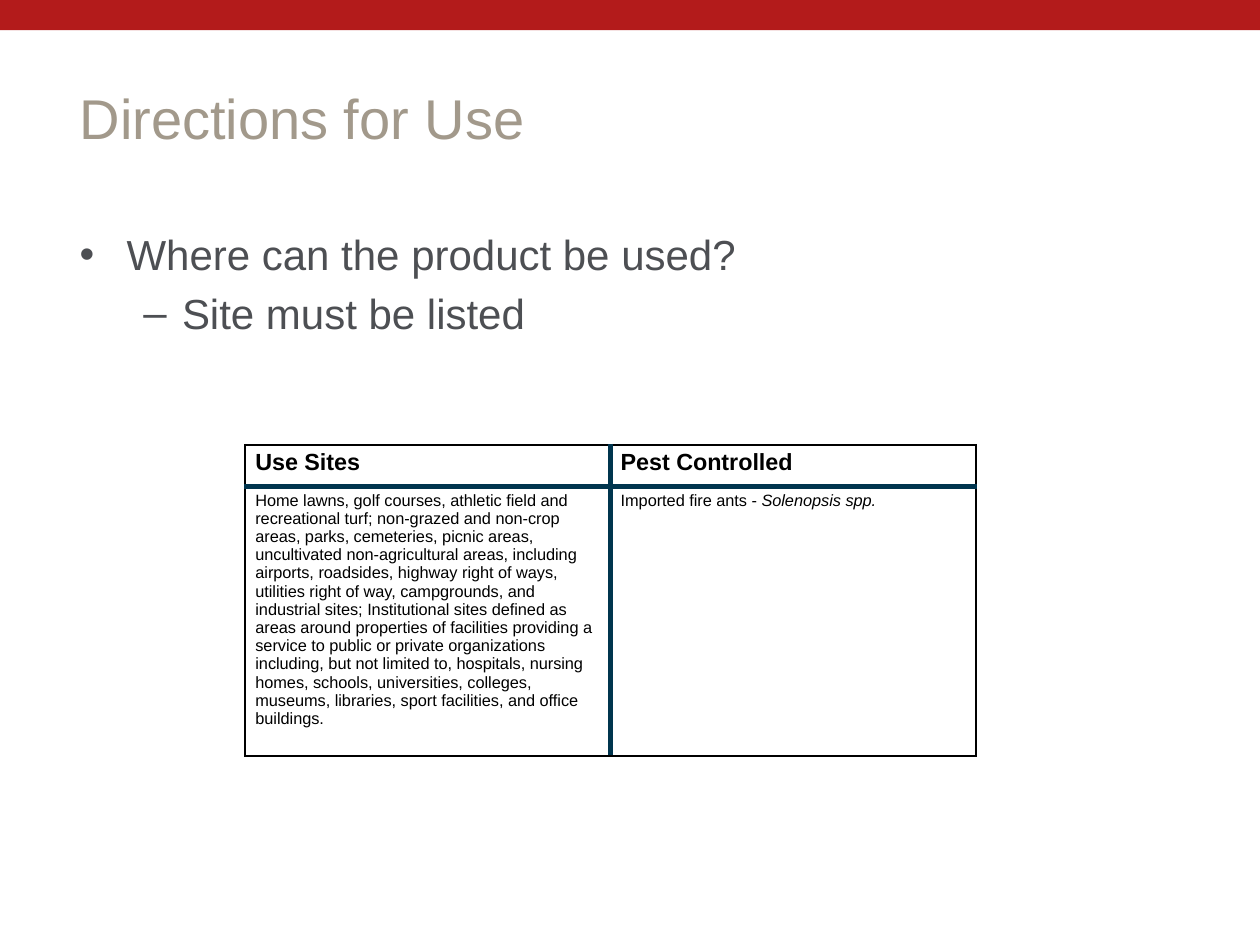
from lxml.etree import SubElement
from pptx import Presentation
from pptx.dml.color import RGBColor
from pptx.enum.shapes import MSO_SHAPE
from pptx.enum.text import MSO_ANCHOR
from pptx.oxml.ns import qn
from pptx.util import Inches, Pt

RED, TAUPE, GREY = "B31B1B", "A2998B", "4D4F53"
BLACK, WHITE, NAVY = "000000", "FFFFFF", "00354E"
OUTER_LINE, INNER_LINE = (BLACK, 1), (NAVY, 2.25)

USE_SITES = (
    "Home lawns, golf courses, athletic field and recreational turf; "
    "non-grazed and non-crop areas, parks, cemeteries, picnic areas, "
    "uncultivated non-agricultural areas, including airports, roadsides, "
    "highway right of ways, utilities right of way, campgrounds, and "
    "industrial sites; Institutional sites defined as areas around "
    "properties of facilities providing a service to public or private "
    "organizations including, but not limited to, hospitals, nursing homes, "
    "schools, universities, colleges, museums, libraries, sport facilities, "
    "and office buildings."
)


def color(hex_string):
    return RGBColor.from_string(hex_string)


def set_attributes(target, values):
    for name, value in values.items():
        setattr(target, name, value)


def fill_solid(target, hex_string):
    target.fill.solid()
    target.fill.fore_color.rgb = color(hex_string)


class SlideBuilder:
    """Adds elements to one slide; lengths are percentages of its size."""

    font_name = "Arial"

    def __init__(self, presentation):
        self.width = presentation.slide_width
        self.height = presentation.slide_height
        self.slide = presentation.slides.add_slide(presentation.slide_layouts[6])

    def across(self, percent):
        return round(self.width * percent / 100)

    def down(self, percent):
        return round(self.height * percent / 100)

    def box(self, left, top, width, height):
        return self.across(left), self.down(top), self.across(width), self.down(height)

    def add_run(self, paragraph, text, size, hex_string, **font_values):
        run = paragraph.add_run()
        run.text = text
        set_attributes(run.font, {"name": self.font_name, "size": Pt(size), **font_values})
        run.font.color.rgb = color(hex_string)

    def add_bar(self, box, hex_string):
        bar = self.slide.shapes.add_shape(MSO_SHAPE.RECTANGLE, *self.box(*box))
        bar.shadow.inherit = False
        fill_solid(bar, hex_string)
        bar.line.fill.background()

    def add_text_box(self, box, anchor=MSO_ANCHOR.TOP):
        frame = self.slide.shapes.add_textbox(*self.box(*box)).text_frame
        set_attributes(frame, {"word_wrap": True, "vertical_anchor": anchor})
        return frame

    def add_title(self, box, text):
        frame = self.add_text_box(box, MSO_ANCHOR.MIDDLE)
        self.add_run(frame.paragraphs[0], text, 24, TAUPE)

    def add_bullets(self, box, items):
        """Each item is (level, bullet, indent, hanging, text), indents in inches."""
        frame = self.add_text_box(box)
        for index, (level, bullet, indent, hanging, text) in enumerate(items):
            paragraph = frame.add_paragraph() if index else frame.paragraphs[0]
            paragraph.level = level
            properties = paragraph._p.get_or_add_pPr()
            properties.set("marL", str(Inches(indent)))
            properties.set("indent", str(-Inches(hanging)))
            SubElement(properties, qn("a:buFont"), typeface=self.font_name)
            SubElement(properties, qn("a:buChar"), char=bullet)
            if index:
                paragraph.space_before = Pt(3.6)
            self.add_run(paragraph, text, 18, GREY)

    def set_borders(self, cell, lines):
        """Lines maps an edge (L, R, T, B) to its colour and width in points."""
        properties = cell._tc.get_or_add_tcPr()
        for position, (edge, (hex_string, width)) in enumerate(lines.items()):
            line = SubElement(properties, qn(f"a:ln{edge}"), w=str(Pt(width)))
            solid = SubElement(line, qn("a:solidFill"))
            SubElement(solid, qn("a:srgbClr"), val=hex_string)
            properties.insert(position, line)

    def add_table(self, left, top, column_widths, row_heights, rows):
        """Each cell is a list of (text, italic) runs; the first row is bold."""
        box = self.box(left, top, sum(column_widths), sum(row_heights))
        table = self.slide.shapes.add_table(len(rows), len(column_widths), *box).table
        set_attributes(table, {"first_row": False, "horz_banding": False})
        for column, width in zip(table.columns, column_widths):
            column.width = self.across(width)
        for row, height in zip(table.rows, row_heights):
            row.height = self.down(height)
        margins = {
            "margin_left": Inches(0.06), "margin_right": Inches(0.06),
            "margin_top": Inches(0.03), "margin_bottom": Inches(0.03),
        }
        last_row, last_column = len(rows) - 1, len(column_widths) - 1
        for r, row in enumerate(rows):
            for c, runs in enumerate(row):
                cell = table.cell(r, c)
                set_attributes(cell, margins)
                fill_solid(cell, WHITE)
                at_edge = {"L": c == 0, "R": c == last_column,
                           "T": r == 0, "B": r == last_row}
                self.set_borders(cell, {
                    edge: OUTER_LINE if outer else INNER_LINE
                    for edge, outer in at_edge.items()
                })
                for text, italic in runs:
                    self.add_run(cell.text_frame.paragraphs[0], text,
                                 7 if r else 10, BLACK, bold=r == 0, italic=italic)


def main():
    presentation = Presentation()
    set_attributes(presentation, {"slide_width": Pt(540), "slide_height": Pt(405)})
    builder = SlideBuilder(presentation)
    builder.add_bar((0, 0, 100, 3.2), RED)
    builder.add_title((5, 4, 90, 16.7), "Directions for Use")
    builder.add_bullets((5, 23.33, 90, 66), [
        (0, "•", 0.28, 0.28, "Where can the product be used?"),
        (1, "–", 0.61, 0.23, "Site must be listed"),
    ])
    builder.add_table(19.47, 47.07, [29, 29], [4.4, 28.5], [
        [[("Use Sites", False)], [("Pest Controlled", False)]],
        [[(USE_SITES, False)],
         [("Imported fire ants - ", False), ("Solenopsis spp.", True)]],
    ])
    presentation.save("out.pptx")


if __name__ == "__main__":
    main()
